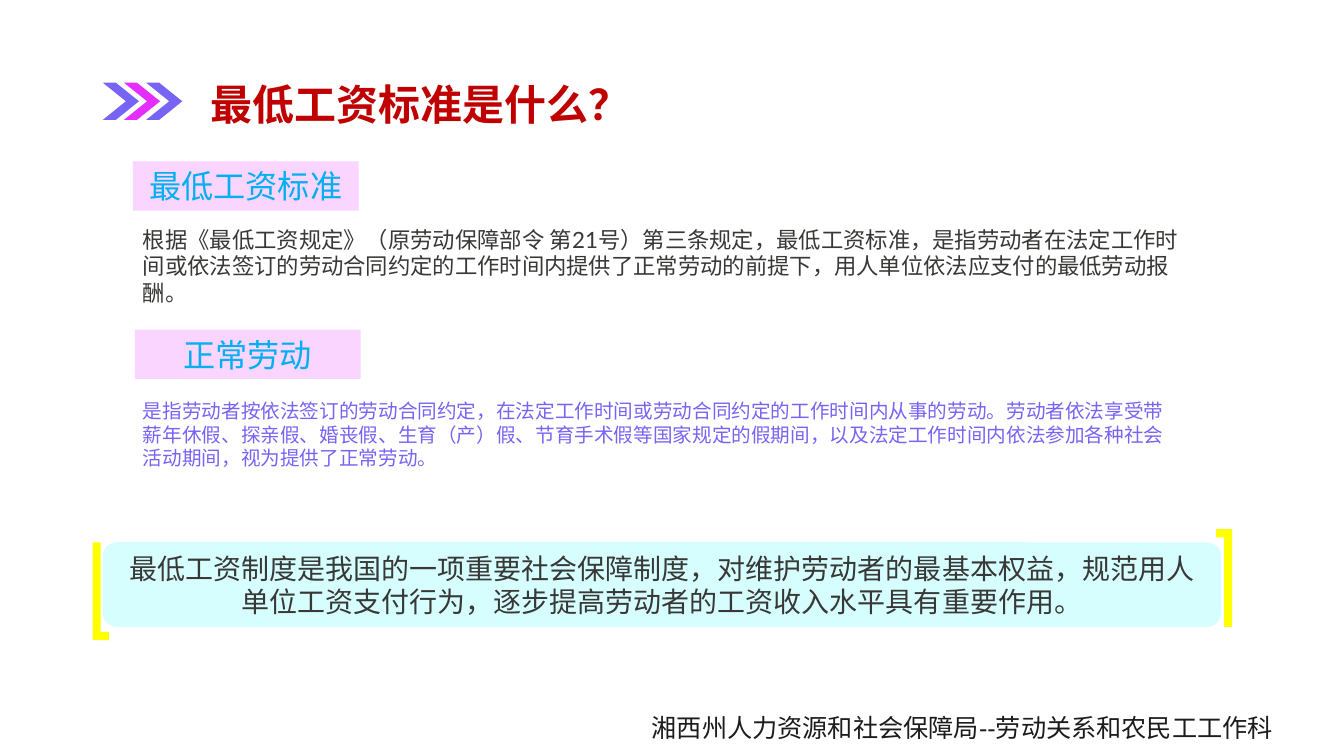
from lxml.etree import SubElement
from pptx import Presentation
from pptx.dml.color import RGBColor
from pptx.enum.shapes import MSO_SHAPE
from pptx.enum.text import MSO_ANCHOR, PP_ALIGN
from pptx.oxml.ns import qn
from pptx.util import Inches, Pt

COLORS = {
    "white": "FFFFFF", "dark": "383836", "black": "1C1C1B", "red": "C00000",
    "violet": "7764F5", "pink": "E32EFF", "pale": "F9D5FF", "blue": "00B0F0",
    "aqua": "D7FEFE", "yellow": "FFFF00",
}
HAN = "Noto Sans CJK SC"


def color(name):
    return RGBColor.from_string(COLORS[name])


def add_run(frame, text, size, font, tint, bold=False, align=PP_ALIGN.LEFT):
    para = frame.paragraphs[0]
    para.alignment = align
    run = para.add_run()
    run.text = text
    run.font.size = Pt(size)
    run.font.bold = bold
    run.font.color.rgb = color(tint)
    run.font.name = font
    props = run.font._element
    SubElement(props, qn("a:ea")).set("typeface", HAN)
    return props


def add_outline(props, tint):
    line = SubElement(props, qn("a:ln"), w=str(Pt(0.75)))
    fill = SubElement(line, qn("a:solidFill"))
    SubElement(fill, qn("a:srgbClr"), val=COLORS[tint])
    props.insert(0, line)


def add_text(slide, box, text, size, font, tint, bold=False, wrap=True):
    frame = slide.shapes.add_textbox(*map(Inches, box)).text_frame
    frame.word_wrap = wrap
    add_run(frame, text, size, font, tint, bold)


def add_block(slide, kind, box, tint):
    shape = slide.shapes.add_shape(kind, *map(Inches, box))
    shape.shadow.inherit = False
    shape.fill.solid()
    shape.fill.fore_color.rgb = color(tint)
    shape.line.fill.background()
    return shape


def add_panel(slide, kind, box, fill, text, size, tint):
    shape = add_block(slide, kind, box, fill)
    frame = shape.text_frame
    frame.word_wrap = True
    frame.vertical_anchor = MSO_ANCHOR.MIDDLE
    return add_run(frame, text, size, HAN, tint, align=PP_ALIGN.CENTER)


def add_label(slide, left, top, text):
    props = add_panel(slide, MSO_SHAPE.RECTANGLE, (left, top, 2.24, 0.49),
                      "pale", text, 23, "blue")
    add_outline(props, "pink")


def add_arrows(slide):
    for left, tint in ((1.45, "violet"), (1.23, "pink"), (1.02, "violet")):
        arrow = add_block(slide, MSO_SHAPE.CHEVRON, (left, 0.82, 0.36, 0.37), tint)
        arrow.adjustments[0] = 0.64


def add_corners(slide):
    for left, top, turn in ((0.92, 5.38, 0), (12.07, 5.25, 180)):
        corner = add_block(slide, MSO_SHAPE.CORNER, (left, top, 0.16, 0.97), "yellow")
        corner.rotation = turn


def main():
    deck = Presentation()
    deck.slide_width, deck.slide_height = Inches(13.34), Inches(7.5)
    slide = deck.slides.add_slide(deck.slide_layouts[6])
    slide.background.fill.solid()
    slide.background.fill.fore_color.rgb = color("white")

    add_arrows(slide)
    add_text(slide, (1.99, 0.73, 4.39, 0.6), "最低工资标准是什么？",
             30, HAN, "red", bold=True, wrap=False)
    add_label(slide, 1.32, 1.6, "最低工资标准")
    add_text(slide, (1.32, 2.19, 10.51, 0.91),
             "根据《最低工资规定》（原劳动保障部令 第21号）第三条规定，最低工资标准，"
             "是指劳动者在法定工作时间或依法签订的劳动合同约定的工作时间内提供了正常劳动的前提下，"
             "用人单位依法应支付的最低劳动报酬。", 16, "Lato", "dark")
    add_label(slide, 1.34, 3.27, "正常劳动")
    add_text(slide, (1.32, 3.91, 10.51, 0.81),
             "是指劳动者按依法签订的劳动合同约定，在法定工作时间或劳动合同约定的工作时间内从事的劳动。"
             "劳动者依法享受带薪年休假、探亲假、婚丧假、生育（产）假、节育手术假等国家规定的假期间，"
             "以及法定工作时间内依法参加各种社会活动期间，视为提供了正常劳动。", 14, "Lato", "violet")
    add_panel(slide, MSO_SHAPE.FLOWCHART_ALTERNATE_PROCESS, (1.02, 5.38, 11.1, 0.84), "aqua",
              "最低工资制度是我国的一项重要社会保障制度，对维护劳动者的最基本权益，"
              "规范用人单位工资支付行为，逐步提高劳动者的工资收入水平具有重要作用。", 20, "dark")
    add_corners(slide)
    add_text(slide, (6.37, 7.02, 6.9, 0.4),
             "湘西州人力资源和社会保障局--劳动关系和农民工工作科", 18, "Arial", "black", wrap=False)
    deck.save("out.pptx")


if __name__ == "__main__":
    main()
